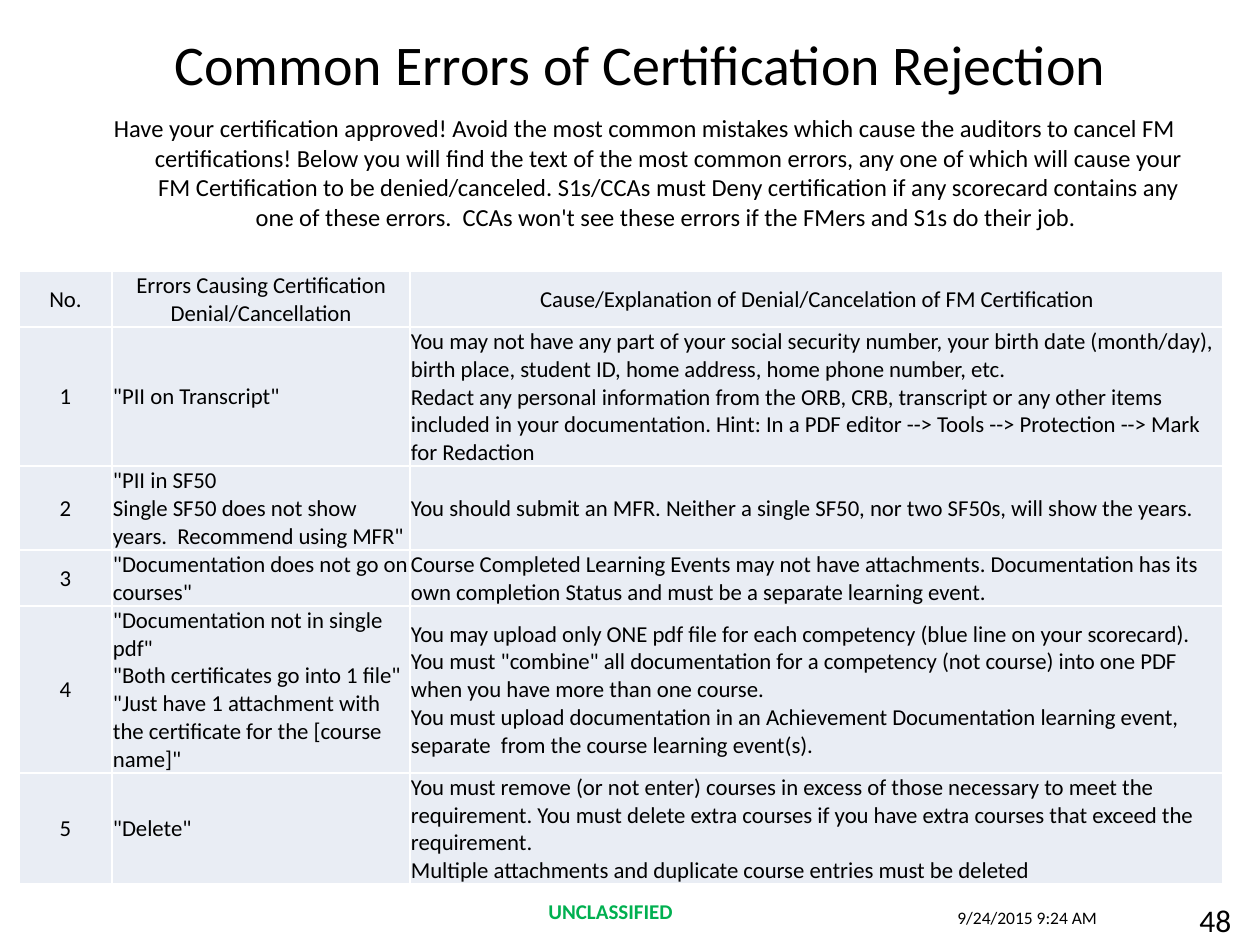
from dataclasses import dataclass

import pptx
import pptx.dml.color
import pptx.enum.text
import pptx.oxml
import pptx.oxml.ns
import pptx.util

PX = 914400 / 126
ALIGN = pptx.enum.text.PP_ALIGN
ANCHOR = pptx.enum.text.MSO_ANCHOR


def px(length):
    return pptx.util.Emu(round(length * PX))


@dataclass(frozen=True)
class Theme:
    font: str = "Calibri"
    ink: str = "000000"
    marking: str = "00B050"
    cell_fill: str = "E9EDF4"
    border: str = "FFFFFF"
    title: int = 32
    page: int = 18
    intro: int = 14
    table: int = 13
    label: int = 12
    stamp: int = 10


class SlideBuilder:
    def __init__(self, slide, theme):
        self.slide = slide
        self.theme = theme

    def style(self, frame, size, color=None, bold=False, align=ALIGN.LEFT):
        for paragraph in frame.paragraphs:
            paragraph.alignment = align
            for run in paragraph.runs:
                run.font.name = self.theme.font
                run.font.size = pptx.util.Pt(size)
                run.font.bold = bold
                run.font.color.rgb = pptx.dml.color.RGBColor.from_string(color or self.theme.ink)

    def place(self, holder, text, box, size, anchor):
        """Move a placeholder to box and fill it with centred text."""
        holder.left, holder.top, holder.width, holder.height = map(px, box)
        frame = holder.text_frame
        frame.text = text
        frame.word_wrap = True
        frame.auto_size = pptx.enum.text.MSO_AUTO_SIZE.NONE
        frame.vertical_anchor = anchor
        self.style(frame, size, align=ALIGN.CENTER)
        return frame

    def title(self, text, box):
        self.place(self.slide.shapes.title, text, box, self.theme.title, ANCHOR.MIDDLE)

    def body(self, text, box, hanging):
        frame = self.place(self.slide.placeholders[1], text, box, self.theme.intro, ANCHOR.TOP)
        paragraph = frame.paragraphs[0]
        paragraph.space_before = pptx.util.Pt(0)
        properties = paragraph._p.get_or_add_pPr()
        properties.set("marL", str(px(hanging)))
        properties.set("indent", str(-px(hanging)))
        pptx.oxml.ns.qn("a:buNone")
        properties.append(pptx.oxml.parse_xml(f'<a:buNone {pptx.oxml.ns.nsdecls("a")}/>'))

    def label(self, text, box, size, color=None, bold=False):
        frame = self.slide.shapes.add_textbox(*map(px, box)).text_frame
        frame.text = text
        frame.word_wrap = True
        self.style(frame, size, color, bold)

    def table(self, rows, left, top, widths, heights):
        frame = self.slide.shapes.add_table(
            len(rows), len(widths), px(left), px(top), px(sum(widths)), px(sum(heights)))
        grid = frame.table
        grid.first_row = grid.horz_banding = False
        for column, width in zip(grid.columns, widths):
            column.width = px(width)
        for r, (texts, height) in enumerate(zip(rows, heights)):
            grid.rows[r].height = px(height)
            for c, text in enumerate(texts):
                centred = r == 0 or c == 0
                self.cell(grid.cell(r, c), text, ALIGN.CENTER if centred else ALIGN.LEFT)

    def cell(self, cell, text, align):
        cell.text_frame.text = text
        cell.vertical_anchor = ANCHOR.MIDDLE
        cell.margin_left = cell.margin_right = cell.margin_top = px(1)
        cell.margin_bottom = 0
        self.style(cell.text_frame, self.theme.table, align=align)
        properties = cell._tc.get_or_add_tcPr()
        for side in ("lnL", "lnR", "lnT", "lnB"):
            properties.append(pptx.oxml.parse_xml(
                f'<a:{side} {pptx.oxml.ns.nsdecls("a")} w="12700"><a:solidFill>'
                f'<a:srgbClr val="{self.theme.border}"/></a:solidFill></a:{side}>'))
        cell.fill.solid()
        cell.fill.fore_color.rgb = pptx.dml.color.RGBColor.from_string(self.theme.cell_fill)


INTRO = (
    "Have your certification approved! Avoid the most common mistakes which cause the auditors "
    "to cancel FM certifications! Below you will find the text of the most common errors, any one "
    "of which will cause your FM Certification to be denied/canceled. S1s/CCAs must Deny "
    "certification if any scorecard contains any one of these errors.  CCAs won't see these errors "
    "if the FMers and S1s do their job. "
)

HEADER = ("No.", "Errors Causing Certification Denial/Cancellation",
          "Cause/Explanation of Denial/Cancelation of FM Certification")

# "\v" is a line break inside a paragraph.
ERRORS = [
    ('"PII on Transcript"',
     "You may not have any part of your social security number, your birth date (month/day), "
     "birth place, student ID, home address, home phone number, etc. \v"
     "Redact any personal information from the ORB, CRB, transcript or any other items included "
     "in your documentation. Hint: In a PDF editor --> Tools --> Protection --> "
     "Mark for Redaction"),
    ('"PII in SF50\vSingle SF50 does not show years.  Recommend using MFR"',
     "You should submit an MFR. Neither a single SF50, nor two SF50s, will show the years."),
    ('"Documentation does not go on courses"',
     "Course Completed Learning Events may not have attachments. Documentation has its own "
     "completion Status and must be a separate learning event."),
    ('"Documentation not in single pdf"\v"Both certificates go into 1 file"\v'
     '"Just have 1 attachment with the certificate for the [course name]"',
     "You may upload only ONE pdf file for each competency (blue line on your scorecard). \v"
     'You must "combine" all documentation for a competency (not course) into one PDF when you '
     "have more than one course.\v"
     "You must upload documentation in an Achievement Documentation learning event, "
     "separate  from the course learning event(s)."),
    ('"Delete"',
     "You must remove (or not enter) courses in excess of those necessary to meet the "
     "requirement. You must delete extra courses if you have extra courses that exceed the "
     "requirement. \vMultiple attachments and duplicate course entries must be deleted"),
]


def main():
    deck = pptx.Presentation()
    deck.slide_width, deck.slide_height = px(1260), px(945)
    theme = Theme()
    page = SlideBuilder(deck.slides.add_slide(deck.slide_layouts[1]), theme)

    page.label("UNCLASSIFIED", (536, 892, 158, 50), theme.label, theme.marking, bold=True)
    page.title("Common Errors of Certification Rejection", (147, 0, 987, 126))
    page.body(INTRO, (78, 107, 1134, 122), hanging=48)
    page.label("48", (1187, 895, 73, 50), theme.page)
    page.label("9/24/2015 9:24 AM", (945, 901, 220, 34), theme.stamp)

    numbered = [(str(number), *error) for number, error in enumerate(ERRORS, start=1)]
    page.table([HEADER, *numbered], 19, 271,
               widths=(93, 298, 813), heights=(56, 139, 84, 56, 167, 111))
    deck.save("out.pptx")


if __name__ == "__main__":
    main()
